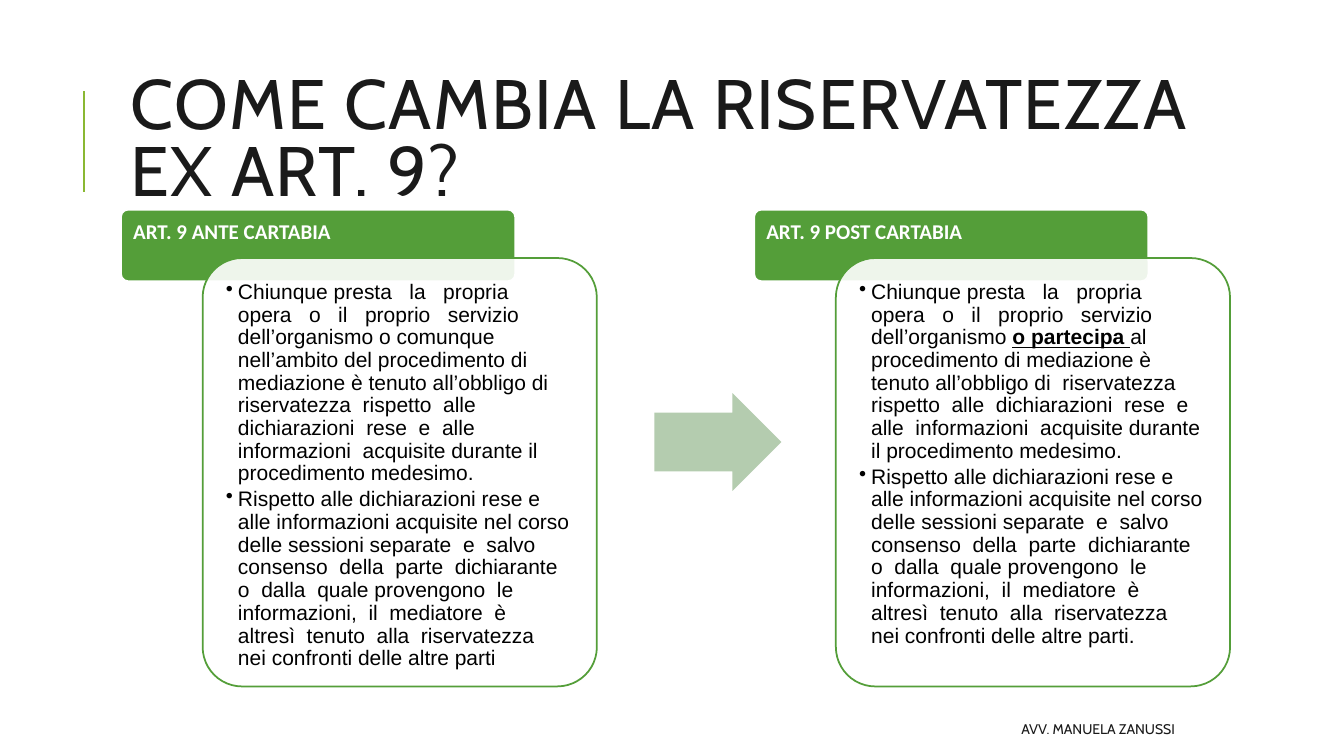
from pptx import Presentation
from pptx.dml.color import RGBColor
from pptx.enum.shapes import MSO_CONNECTOR, MSO_SHAPE
from pptx.enum.text import MSO_ANCHOR, PP_ALIGN
from pptx.oxml.ns import qn
from pptx.util import Inches, Pt
from lxml import etree

ROUNDED, ARROW = MSO_SHAPE.ROUNDED_RECTANGLE, MSO_SHAPE.RIGHT_ARROW
STRAIGHT = MSO_CONNECTOR.STRAIGHT
TOP, MIDDLE = MSO_ANCHOR.TOP, MSO_ANCHOR.MIDDLE
LEFT, RIGHT = PP_ALIGN.LEFT, PP_ALIGN.RIGHT

GREEN, LIME, PALE_GREEN = "549E39", "8AB833", "B4CCAF"
WHITE, BLACK, DARK = "FFFFFF", "000000", "1A1A1A"

DUTY = (
    "tenuto all’obbligo di  riservatezza  rispetto  alle  dichiarazioni  rese  e  alle  "
    "informazioni  acquisite durante il procedimento medesimo."
)
OPENING = (
    "Chiunque presta   la   propria   opera   o   il   proprio   servizio dell’organismo "
)
SESSIONS = (
    "Rispetto alle dichiarazioni rese e alle informazioni acquisite nel corso delle "
    "sessioni separate  e  salvo  consenso  della  parte  dichiarante  o  dalla  quale "
    "provengono  le  informazioni,  il  mediatore  è  altresì  tenuto  alla  "
    "riservatezza  nei confronti delle altre parti"
)

# Each paragraph is a list of (text, emphasised) runs
BEFORE = [
    [(OPENING + "o comunque nell’ambito del procedimento di mediazione è " + DUTY, False)],
    [(SESSIONS, False)],
]
AFTER = [
    [(OPENING, False), ("o partecipa ", True),
     ("al procedimento di mediazione è " + DUTY, False)],
    [(SESSIONS + ".", False)],
]


def rgb(hex_color):
    return RGBColor.from_string(hex_color)


def add_shape(s, kind, box, fill, line=None, adj=(), alpha=None):
    sp = s.shapes.add_shape(kind, *map(Inches, box))
    sp.shadow.inherit = False
    for i, value in enumerate(adj):
        sp.adjustments[i] = value
    sp.fill.solid()
    sp.fill.fore_color.rgb = rgb(fill)
    if alpha is not None:
        color = sp.fill._xPr.find(qn("a:solidFill"))[0]
        etree.SubElement(color, qn("a:alpha")).set("val", str(alpha * 1000))
    if line:
        sp.line.color.rgb = rgb(line)
        sp.line.width = Pt(1.25)
    else:
        sp.line.fill.background()
    return sp


def set_bullet(p):
    pPr = p._p.get_or_add_pPr()
    pPr.set("marL", str(Inches(0.12)))
    pPr.set("indent", str(-Inches(0.12)))
    etree.SubElement(pPr, qn("a:buChar")).set("char", "•")


def add_text(s, box, paragraphs, size, font, color, bold=False, anchor=TOP, align=LEFT,
             insets=(0.1, 0.05, 0.1, 0.05), spacing=1.0, after=0, bullets=False,
             tracking=0):
    """Add a text box; paragraphs is a string or a list of lists of runs."""
    if isinstance(paragraphs, str):
        paragraphs = [[(paragraphs, False)]]
    tf = s.shapes.add_textbox(*map(Inches, box)).text_frame
    tf.word_wrap = True
    tf.vertical_anchor = anchor
    tf.margin_left, tf.margin_top, tf.margin_right, tf.margin_bottom = map(Inches, insets)
    for i, runs in enumerate(paragraphs):
        p = tf.add_paragraph() if i else tf.paragraphs[0]
        p.alignment = align
        p.line_spacing = spacing
        p.space_after = Pt(after)
        if bullets:
            set_bullet(p)
        for text, emphasised in runs:
            r = p.add_run()
            r.text = text
            r.font.name, r.font.size = font, Pt(size)
            r.font.color.rgb = rgb(color)
            r.font.bold = bold or emphasised
            r.font.underline = emphasised
            if tracking:
                r._r.get_or_add_rPr().set("spc", str(tracking * 100))


def add_rule(s, x, top, bottom):
    line = s.shapes.add_connector(STRAIGHT, Inches(x), Inches(bottom), Inches(x), Inches(top))
    line.line.color.rgb = rgb(LIME)
    line.line.width = Pt(1.5)
    etree.SubElement(line._element.spPr, qn("a:effectLst"))


def add_panel(s, x, heading, paragraphs):
    """Green heading tab with a translucent card overlapping its lower right."""
    add_shape(s, ROUNDED, (x, 2.08, 3.91, 0.71), GREEN, line=WHITE, adj=[0.1])
    add_text(s, (x, 2.08, 3.91, 0.47), heading, 15, "Calibri", WHITE, bold=True,
             insets=(0.12, 0.12, 0.12, 0.06), spacing=0.9, after=5)
    add_shape(s, ROUNDED, (x + 0.81, 2.56, 3.91, 4.25), WHITE, line=GREEN, adj=[0.1],
              alpha=90)
    add_text(s, (x + 0.92, 2.67, 3.68, 4.02), paragraphs, 15, "Arial", BLACK,
             insets=[0.12] * 4, spacing=0.9, after=2.25, bullets=True)


def main():
    prs = Presentation()
    prs.slide_width, prs.slide_height = Inches(13.33), Inches(7.5)
    s = prs.slides.add_slide(prs.slide_layouts[6])

    # Title and footer
    add_rule(s, 0.83, 0.9, 1.9)
    add_text(s, (1.2, 0.9, 11, 1.04), "COME CAMBIA LA RISERVATEZZA EX ART. 9?", 50,
             "Cabin", DARK, anchor=MIDDLE, spacing=0.8, tracking=1)
    add_text(s, (5.3, 7.08, 6.45, 0.3), "AVV. MANUELA ZANUSSI", 10, "Cabin", DARK,
             anchor=MIDDLE, align=RIGHT)

    # Comparison before and after the reform
    add_panel(s, 1.2, "ART. 9 ANTE CARTABIA", BEFORE)
    add_shape(s, ARROW, (6.49, 3.9, 1.26, 0.97), PALE_GREEN, adj=[0.6, 0.5])
    add_panel(s, 7.48, "ART. 9 POST CARTABIA", AFTER)

    prs.save("out.pptx")


if __name__ == "__main__":
    main()
